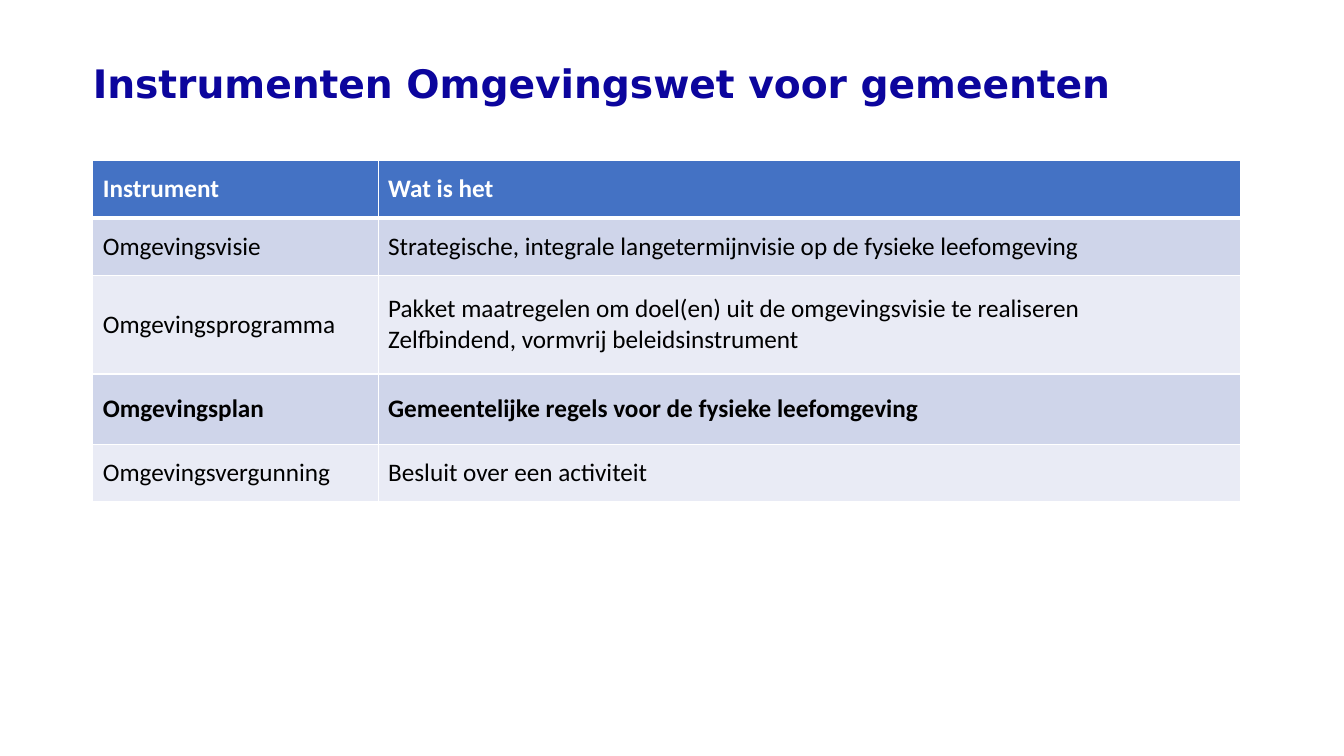
from lxml import etree
from pptx import Presentation
from pptx.dml.color import RGBColor
from pptx.enum.text import MSO_ANCHOR, MSO_AUTO_SIZE, PP_ALIGN
from pptx.oxml import parse_xml
from pptx.oxml.ns import nsdecls
from pptx.util import Inches, Pt

MIDDLE = MSO_ANCHOR.MIDDLE
LEFT = PP_ALIGN.LEFT
NO_FIT = MSO_AUTO_SIZE.NONE

COLORS = {
    "title": "0C059D",
    "head": "4472C4",
    "dark": "CFD5EA",
    "light": "E9EBF5",
    "text": "000000",
    "white": "FFFFFF",
}
COLS = [2.83, 8.55]
ROWS = [
    (0.57, "Instrument", "Wat is het"),
    (0.57, "Omgevingsvisie",
     "Strategische, integrale langetermijnvisie op de fysieke leefomgeving"),
    (0.98, "Omgevingsprogramma",
     "Pakket maatregelen om doel(en) uit de omgevingsvisie te realiseren\n"
     "Zelfbindend, vormvrij beleidsinstrument"),
    (0.7, "Omgevingsplan", "Gemeentelijke regels voor de fysieke leefomgeving"),
    (0.57, "Omgevingsvergunning", "Besluit over een activiteit"),
]
BOLD_ROWS = (0, 3)


def write(frame, text, font="Calibri", size=18, color="text", bold=False, line=1.0):
    frame.text = text
    for para in frame.paragraphs:
        para.alignment = LEFT
        para.line_spacing = line
        for run in para.runs:
            run.font.name = font
            run.font.size = Pt(size)
            run.font.bold = bold
            run.font.color.rgb = RGBColor.from_string(COLORS[color])


class Deck:
    """Holds the style and the current slide."""

    def __init__(self):
        self.prs = Presentation()
        self.prs.slide_width = Inches(13.33)
        self.prs.slide_height = Inches(7.5)
        self.slide = self.prs.slides.add_slide(self.prs.slide_layouts[5])

    def title(self, text, left, top, width, height):
        shape = self.slide.shapes.title
        shape.left, shape.top = Inches(left), Inches(top)
        shape.width, shape.height = Inches(width), Inches(height)
        frame = shape.text_frame
        frame.margin_left = frame.margin_right = 0
        frame.margin_top = frame.margin_bottom = 0
        frame.vertical_anchor = MIDDLE
        frame.word_wrap = True
        frame.auto_size = NO_FIT
        write(frame, text, font="DejaVu Sans", size=28, color="title", bold=True, line=0.9)

    def border(self, cell, side, width):
        line = parse_xml(f'<a:ln{side} {nsdecls("a")} w="{Pt(width)}"/>')
        fill = etree.SubElement(line, line.tag.replace(f"ln{side}", "solidFill"))
        etree.SubElement(fill, line.tag.replace(f"ln{side}", "srgbClr"), val=COLORS["white"])
        cell._tc.get_or_add_tcPr().append(line)

    def cell(self, cell, text, row):
        head = row == 0
        for side in "LRTB":
            thick = (head and side == "B") or (row == 1 and side == "T")
            self.border(cell, side, 3 if thick else 1)
        fill = "head" if head else ("dark" if row % 2 else "light")
        cell.fill.solid()
        cell.fill.fore_color.rgb = RGBColor.from_string(COLORS[fill])
        cell.vertical_anchor = MIDDLE
        write(cell.text_frame, text, color="white" if head else "text", bold=row in BOLD_ROWS)

    def table(self, rows, cols, left, top):
        width, height = sum(cols), sum(row[0] for row in rows)
        table = self.slide.shapes.add_table(
            len(rows), len(cols), Inches(left), Inches(top), Inches(width), Inches(height)
        ).table
        for col, size in zip(table.columns, cols):
            col.width = Inches(size)
        for r, (size, *texts) in enumerate(rows):
            table.rows[r].height = Inches(size)
            for c, text in enumerate(texts):
                self.cell(table.cell(r, c), text, r)


def main():
    deck = Deck()
    deck.title("Instrumenten Omgevingswet voor gemeenten", 0.92, 0.64, 11.5, 0.42)
    deck.table(ROWS, COLS, 0.92, 1.59)
    deck.prs.save("out.pptx")


if __name__ == "__main__":
    main()
